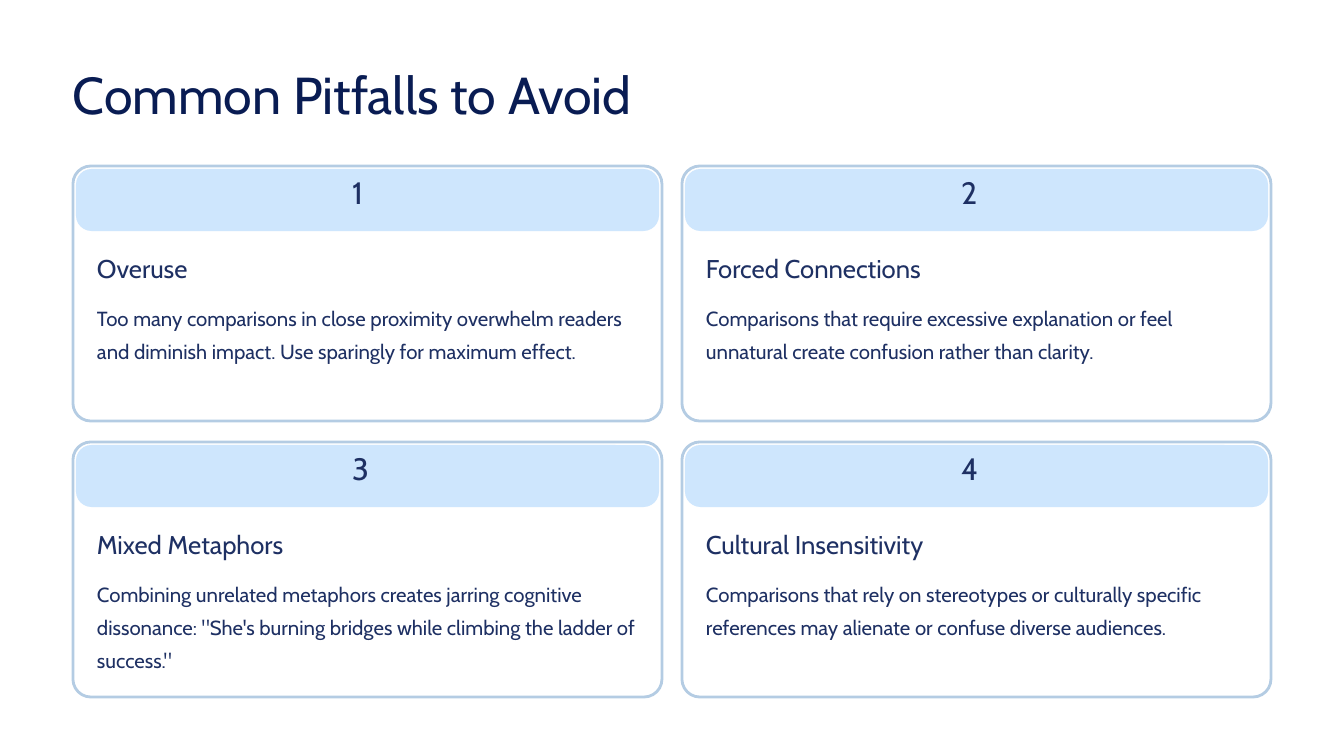
from dataclasses import dataclass

from pptx import Presentation
from pptx import util as u
from pptx.dml import color
from pptx.enum import shapes, text

EMU_PER_PX = u.Inches(1) / 84


def px(length):
    return u.Emu(round(length * EMU_PER_PX))


@dataclass(frozen=True)
class Theme:
    font: str = "Cabin"
    title_color: str = "091C53"
    text_color: str = "1E3063"
    border_color: str = "B4CCE3"
    band_color: str = "CEE6FD"
    border_width: float = 2.4
    # Type size and line spacing, in points
    title: tuple = (44.5, 55.5)
    number: tuple = (26.5, 26.5)
    heading: tuple = (22, 27.5)
    body: tuple = (17.5, 28.5)


def write_text(shape, content, *, font, type_size, ink, wrap=False):
    frame = shape.text_frame
    frame.margin_left = frame.margin_right = 0
    frame.margin_top = frame.margin_bottom = 0
    frame.auto_size = text.MSO_AUTO_SIZE.NONE
    frame.vertical_anchor = text.MSO_ANCHOR.TOP
    frame.word_wrap = wrap
    size, line_spacing = type_size
    paragraph = frame.paragraphs[0]
    paragraph.alignment = text.PP_ALIGN.LEFT
    paragraph.line_spacing = u.Pt(line_spacing)
    paragraph.space_before = u.Pt(0)
    run = paragraph.add_run()
    run.text = content
    run.font.name = font
    run.font.size = u.Pt(size)
    run.font.color.rgb = color.RGBColor.from_string(ink)


class SlideBuilder:
    def __init__(self, slide, theme):
        self.slide = slide
        self.theme = theme

    def title(self, content, left, top, width, height):
        shape = self.slide.shapes.title
        shape.left, shape.top = px(left), px(top)
        shape.width, shape.height = px(width), px(height)
        write_text(shape, content, font=self.theme.font,
                   type_size=self.theme.title, ink=self.theme.title_color)

    def label(self, content, left, top, width, height, type_size, wrap=False):
        shape = self.slide.shapes.add_textbox(
            px(left), px(top), px(width), px(height))
        write_text(shape, content, font=self.theme.font, type_size=type_size,
                   ink=self.theme.text_color, wrap=wrap)

    def rounded(self, left, top, width, height, radius, fill=None, line=None):
        shape = self.slide.shapes.add_shape(
            shapes.MSO_SHAPE.ROUNDED_RECTANGLE,
            px(left), px(top), px(width), px(height))
        shape.shadow.inherit = False
        shape.adjustments[0] = radius
        if fill:
            shape.fill.solid()
            shape.fill.fore_color.rgb = color.RGBColor.from_string(fill)
        else:
            shape.fill.background()
        if line:
            shape.line.color.rgb = color.RGBColor.from_string(line)
            shape.line.width = u.Pt(self.theme.border_width)
        else:
            shape.line.fill.background()

    def card(self, number, heading, body, left, top):
        theme = self.theme
        # Frame and numbered band
        self.rounded(left, top, 589, 255, 0.07, line=theme.border_color)
        self.rounded(left + 3, top + 3, 583, 62, 0.25, fill=theme.band_color)
        self.label(str(number), left + 279, top + 14, 31, 39, theme.number)
        # Heading and explanation
        self.label(heading, left + 24, top + 86, 260, 33, theme.heading)
        self.label(body, left + 24, top + 131, 542, 100, theme.body, wrap=True)


PITFALLS = [
    ("Overuse",
     "Too many comparisons in close proximity overwhelm readers and diminish "
     "impact. Use sparingly for maximum effect."),
    ("Forced Connections",
     "Comparisons that require excessive explanation or feel unnatural create "
     "confusion rather than clarity."),
    ("Mixed Metaphors",
     "Combining unrelated metaphors creates jarring cognitive dissonance: "
     "\"She's burning bridges while climbing the ladder of success.\""),
    ("Cultural Insensitivity",
     "Comparisons that rely on stereotypes or culturally specific references "
     "may alienate or confuse diverse audiences."),
]


def main():
    presentation = Presentation()
    presentation.slide_width, presentation.slide_height = px(1344), px(756)
    title_only = presentation.slide_layouts.get_by_name("Title Only")
    builder = SlideBuilder(presentation.slides.add_slide(title_only), Theme())

    builder.title("Common Pitfalls to Avoid", 73, 60, 620, 66)

    # Two-by-two grid of cards
    for index, (heading, body) in enumerate(PITFALLS):
        row, column = divmod(index, 2)
        builder.card(index + 1, heading, body,
                     left=73 + column * 609, top=166 + row * 276)

    presentation.save("out.pptx")


if __name__ == "__main__":
    main()
